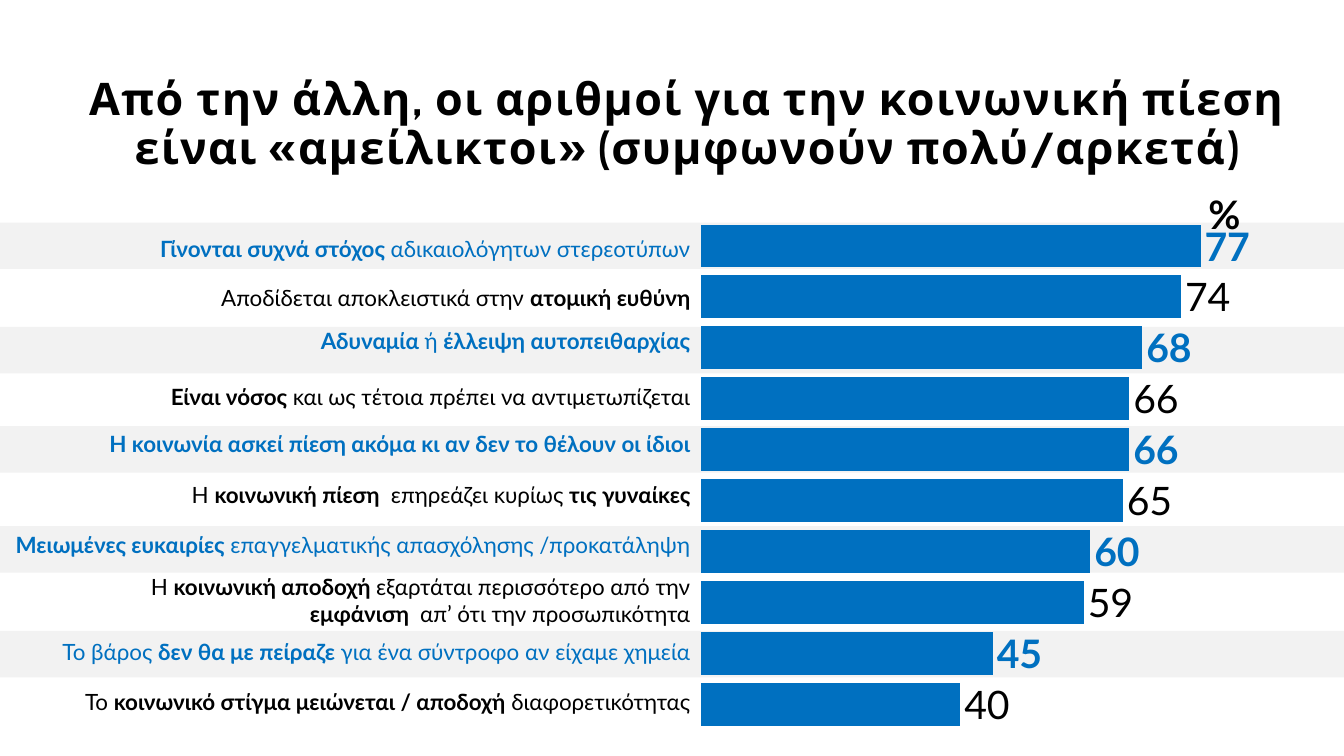
import pptx
import pptx.chart.data
import pptx.dml.color
import pptx.enum.chart
import pptx.enum.shapes
import pptx.enum.text
import pptx.oxml
import pptx.util

Cm = pptx.util.Cm
Pt = pptx.util.Pt
RGBColor = pptx.dml.color.RGBColor
PP_ALIGN = pptx.enum.text.PP_ALIGN
OUTSIDE_END = pptx.enum.chart.XL_LABEL_POSITION.OUTSIDE_END
BLUE = RGBColor(0x00, 0x70, 0xC0)
BLACK = RGBColor(0x00, 0x00, 0x00)
BAND_GREY = RGBColor(0xF2, 0xF2, 0xF2)
LABEL_RIGHT = 17.65
BAND_TOPS = [5.61, 8.24, 10.74, 13.26, 15.9]

# Left and top in cm, statement with *bold* parts, share who agree
STATEMENTS = [
    (1.17, 5.79, "*Γίνονται συχνά στόχος *αδικαιολόγητων στερεοτύπων", 0.77),
    (0.61, 7.04, "Αποδίδεται αποκλειστικά στην *ατομική ευθύνη*", 0.74),
    (4.17, 8.12, "*Αδυναμία *ή *έλλειψη αυτοπειθαρχίας*", 0.68),
    (2.84, 9.53, "*Είναι νόσος *και ως τέτοια πρέπει να αντιμετωπίζεται", 0.66),
    (2.44, 10.72, "*Η κοινωνία ασκεί πίεση ακόμα κι αν δεν το θέλουν οι ίδιοι*", 0.66),
    (3.15, 11.99, "Η *κοινωνική πίεση * επηρεάζει κυρίως *τις γυναίκες*", 0.65),
    (0, 13.26, "*Μειωμένες ευκαιρίες *επαγγελματικής απασχόλησης /προκατάληψη", 0.6),
    (2.59, 14.33, "Η *κοινωνική αποδοχή *εξαρτάται περισσότερο από την "
                  "*εμφάνιση * απ’ ότι την προσωπικότητα", 0.59),
    (-0.1, 15.95, "Το βάρος *δεν θα με πείραζε *για ένα σύντροφο αν είχαμε χημεία", 0.45),
    (0.08, 17.22, "Το *κοινωνικό στίγμα μειώνεται / αποδοχή *διαφορετικότητας", 0.4),
]


def add_span(para, text, size, color, bold, font="Lato"):
    span = para.add_run()
    span.text = text
    span.font.name = font
    span.font.size = Pt(size)
    span.font.bold = bold
    span.font.color.rgb = color
    return span


def add_box(page, left, top, width, height, align):
    """Add a wrapping text box and return it with its first paragraph."""
    box = page.shapes.add_textbox(Cm(left), Cm(top), Cm(width), Cm(height))
    box.text_frame.word_wrap = True
    para = box.text_frame.paragraphs[0]
    para.alignment = align
    return box, para


deck = pptx.Presentation()
deck.slide_width = Cm(33.87)
deck.slide_height = Cm(19.05)
page = deck.slides.add_slide(deck.slide_layouts[6])

# Grey bands behind every other row
for top in BAND_TOPS:
    band = page.shapes.add_shape(
        pptx.enum.shapes.MSO_SHAPE.RECTANGLE,
        Cm(0), Cm(top), deck.slide_width, Cm(1.17))
    band.shadow.inherit = False
    band.fill.solid()
    band.fill.fore_color.rgb = BAND_GREY
    band.line.fill.background()

# Bar chart
data = pptx.chart.data.CategoryChartData(number_format="0.0%")
data.categories = [str(number + 1) for number in range(len(STATEMENTS))]
data.add_series("Series 1", [row[3] for row in STATEMENTS])
chart = page.shapes.add_chart(
    pptx.enum.chart.XL_CHART_TYPE.BAR_CLUSTERED,
    Cm(3.19), Cm(5.3), Cm(30.99), Cm(13.31), data).chart
chart.has_legend = False
chart.has_title = False
chart.font.name = "Lato"
chart.font.size = Pt(9)
chart.font.color.rgb = BLACK
chart.category_axis.reverse_order = True
chart.category_axis.visible = False
chart.value_axis.maximum_scale = 1
chart.value_axis.has_major_gridlines = False
chart.value_axis.tick_labels.number_format = "0.0%"
chart.value_axis.tick_labels.number_format_is_linked = False
chart.value_axis.visible = False

plot = chart.plots[0]
plot.gap_width = 20
plot.vary_by_categories = False
bars = plot.series[0]
bars.format.fill.solid()
bars.format.fill.fore_color.rgb = BLUE
values = bars.data_labels
values.show_value = True
values.number_format = "0.0%"
values.number_format_is_linked = False
values.position = OUTSIDE_END
values.font.size = Pt(28)
values.font.bold = True
for number, (left, top, statement, share) in enumerate(STATEMENTS):
    striped = number % 2 == 0
    label = bars.points[number].data_label
    add_span(label.text_frame.paragraphs[0], f"{share * 100:.0f}", 28,
             BLUE if striped else BLACK, striped)
    label.position = OUTSIDE_END

plot_area = chart._chartSpace.chart.plotArea
for old_layout in plot_area.findall(pptx.oxml.ns.qn("c:layout")):
    plot_area.remove(old_layout)
plot_area.insert(0, pptx.oxml.parse_xml(
    '<c:layout xmlns:c="http://schemas.openxmlformats.org/drawingml/2006/chart">'
    '<c:manualLayout><c:layoutTarget val="inner"/>'
    '<c:xMode val="edge"/><c:yMode val="edge"/>'
    '<c:x val="0.467"/><c:y val="0.019"/><c:w val="0.528"/><c:h val="0.965"/>'
    '</c:manualLayout></c:layout>'))

# Statements, right-aligned against the bars
for number, (left, top, statement, share) in enumerate(STATEMENTS):
    height = 1.63 if number == 7 else 0.94
    box, para = add_box(page, left, top, LABEL_RIGHT - left, height, PP_ALIGN.RIGHT)
    for index, part in enumerate(statement.split("*")):
        if part:
            add_span(para, part, 16, BLACK if number % 2 else BLUE, index % 2 == 1)

# Title
box, para = add_box(page, 1.45, 0.83, 31.75, 3.68, PP_ALIGN.CENTER)
box.text_frame.vertical_anchor = pptx.enum.text.MSO_ANCHOR.BOTTOM
para.line_spacing = 0.9
title = add_span(
    para, "Από την άλλη, οι αριθμοί για την κοινωνική πίεση είναι "
    "«αμείλικτοι» (συμφωνούν πολύ/αρκετά)", 32, BLACK, True, "Cabin")
title.font._element.set("spc", "100")

# Unit above the values
box, para = add_box(page, 30.2, 4.68, 1.88, 1.45, PP_ALIGN.LEFT)
add_span(para, "%", 28, BLACK, True)

deck.save("out.pptx")
